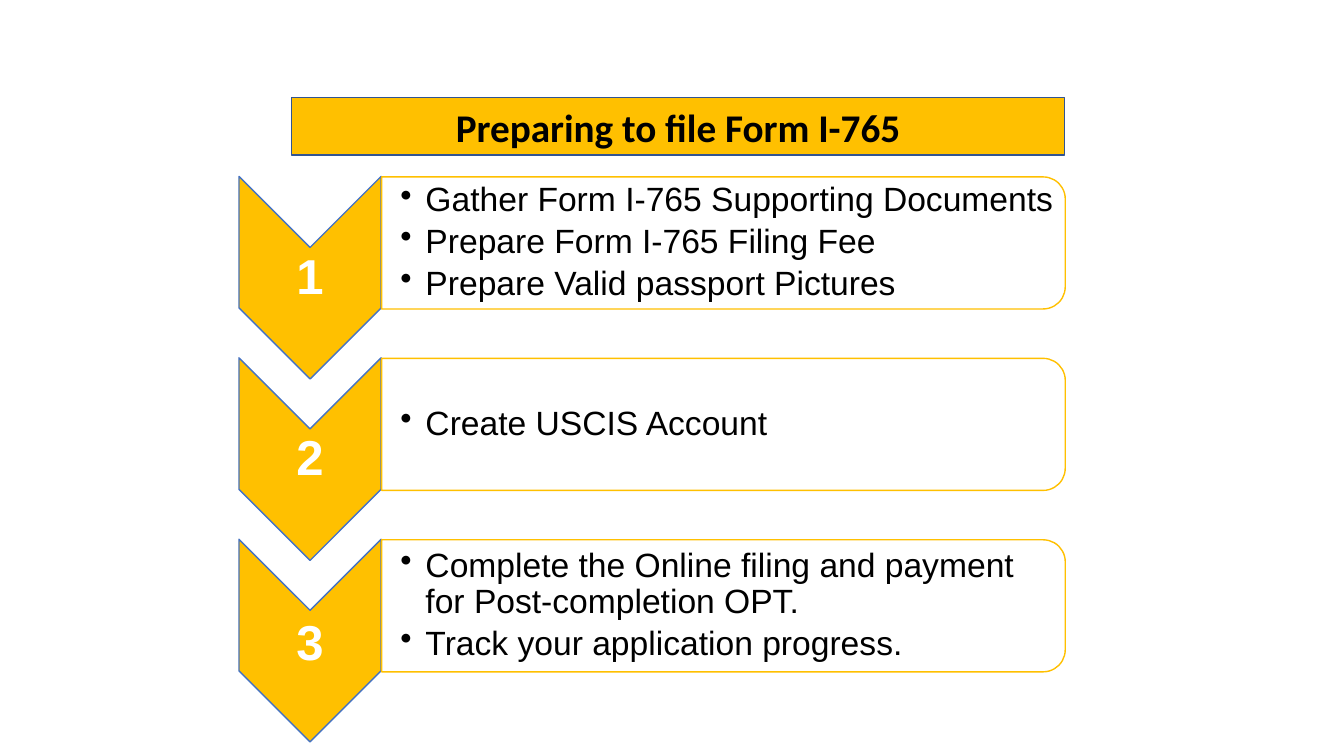
from dataclasses import dataclass

import pptx
import pptx.dml.color
import pptx.enum.shapes
import pptx.enum.text
import pptx.oxml
import pptx.oxml.ns
import pptx.presentation
import pptx.shapes.autoshape
import pptx.slide
import pptx.text.text
import pptx.util

Inches = pptx.util.Inches
Shapes = pptx.enum.shapes.MSO_SHAPE
Align = pptx.enum.text.PP_ALIGN

GOLD = "FFC000"
BLUE = "4472C4"
NAVY = "325491"
WHITE = "FFFFFF"
BLACK = "000000"
STEP_PITCH = 1.8


@dataclass
class Frame:
    left: float
    top: float
    width: float
    height: float

    def lengths(self) -> list[pptx.util.Length]:
        return [Inches(side) for side in (self.left, self.top, self.width, self.height)]


@dataclass
class Step:
    number: str
    tasks: list[str]
    number_spacing: float = 0.9


STEPS = [
    Step("1", [
        "Gather Form I-765 Supporting Documents",
        "Prepare Form I-765 Filing Fee",
        "Prepare Valid passport Pictures",
    ]),
    Step("2", ["Create USCIS Account"]),
    Step("3", [
        "Complete the Online filing and payment for Post-completion OPT.",
        "Track your application progress.",
    ], 1.0),
]


def color(value: str) -> pptx.dml.color.RGBColor:
    return pptx.dml.color.RGBColor.from_string(value)


def add_panel(page: pptx.slide.Slide, kind: Shapes, frame: Frame, fill: str,
              line: str, rotation: float = 0) -> pptx.shapes.autoshape.Shape:
    panel = page.shapes.add_shape(kind, *frame.lengths())
    panel.rotation = rotation
    panel.shadow.inherit = False
    panel.fill.solid()
    panel.fill.fore_color.rgb = color(fill)
    panel.line.color.rgb = color(line)
    panel.line.width = pptx.util.Pt(1)
    return panel


def set_alpha(panel: pptx.shapes.autoshape.Shape, percent: int) -> None:
    fill_color = panel.fill._xPr.find(".//" + pptx.oxml.ns.qn("a:srgbClr"))
    alpha = fill_color.makeelement(pptx.oxml.ns.qn("a:alpha"), {"val": str(percent * 1000)})
    fill_color.append(alpha)


def add_box(page: pptx.slide.Slide, frame: Frame, left_inset: float,
            text: str) -> pptx.text.text.TextFrame:
    text_frame = page.shapes.add_textbox(*frame.lengths()).text_frame
    text_frame.word_wrap = True
    text_frame.vertical_anchor = pptx.enum.text.MSO_ANCHOR.MIDDLE
    text_frame.margin_left = Inches(left_inset)
    text_frame.margin_top = text_frame.margin_right = text_frame.margin_bottom = Inches(0.02)
    text_frame.text = text
    return text_frame


def style_runs(para: pptx.text.text._Paragraph, font: str, size: float,
               ink: str, bold: bool = False) -> None:
    for span in para.runs:
        span.font.name = font
        span.font.size = pptx.util.Pt(size)
        span.font.bold = bold
        span.font.color.rgb = color(ink)


def add_bullet(para: pptx.text.text._Paragraph) -> None:
    properties = para._p.get_or_add_pPr()
    properties.set("marL", str(Inches(0.25)))
    properties.set("indent", str(Inches(-0.25)))
    bullet = properties.makeelement(pptx.oxml.ns.qn("a:buChar"), {"char": "•"})
    properties.append(bullet)


def add_title(page: pptx.slide.Slide) -> None:
    title = add_panel(page, Shapes.RECTANGLE, Frame(2.89, 0.97, 7.67, 0.57), GOLD, NAVY)
    title.text_frame.text = "Preparing to file Form I-765"
    title.text_frame.vertical_anchor = pptx.enum.text.MSO_ANCHOR.MIDDLE
    para = title.text_frame.paragraphs[0]
    para.alignment = Align.CENTER
    style_runs(para, "Calibri", 28, BLACK, True)


def add_step(page: pptx.slide.Slide, step: Step, offset: float) -> None:
    add_panel(page, Shapes.CHEVRON, Frame(2.07, 2.05 + offset, 2.01, 1.41), GOLD, BLUE, 90)
    label = add_box(page, Frame(2.37, 2.46 + offset, 1.41, 0.6), 0.02, step.number)
    para = label.paragraphs[0]
    para.alignment = Align.CENTER
    para.line_spacing = step.number_spacing
    style_runs(para, "Arial", 35, WHITE, True)

    card = add_panel(page, Shapes.ROUND_2_SAME_RECTANGLE,
                     Frame(6.52, -0.98 + offset, 1.31, 6.78), WHITE, GOLD, 90)
    set_alpha(card, 90)
    tasks = add_box(page, Frame(3.78, 1.82 + offset, 6.72, 1.18), 0.19, "\n".join(step.tasks))
    for para in tasks.paragraphs:
        add_bullet(para)
        para.line_spacing = 0.9
        para.space_after = pptx.util.Pt(4)
        style_runs(para, "Arial", 24, BLACK)


def main() -> None:
    deck = pptx.Presentation()
    deck.slide_width = Inches(13.33)
    deck.slide_height = Inches(7.5)
    page = deck.slides.add_slide(deck.slide_layouts[6])
    add_title(page)
    for index, step in enumerate(STEPS):
        add_step(page, step, index * STEP_PITCH)
    deck.save("out.pptx")


if __name__ == "__main__":
    main()
